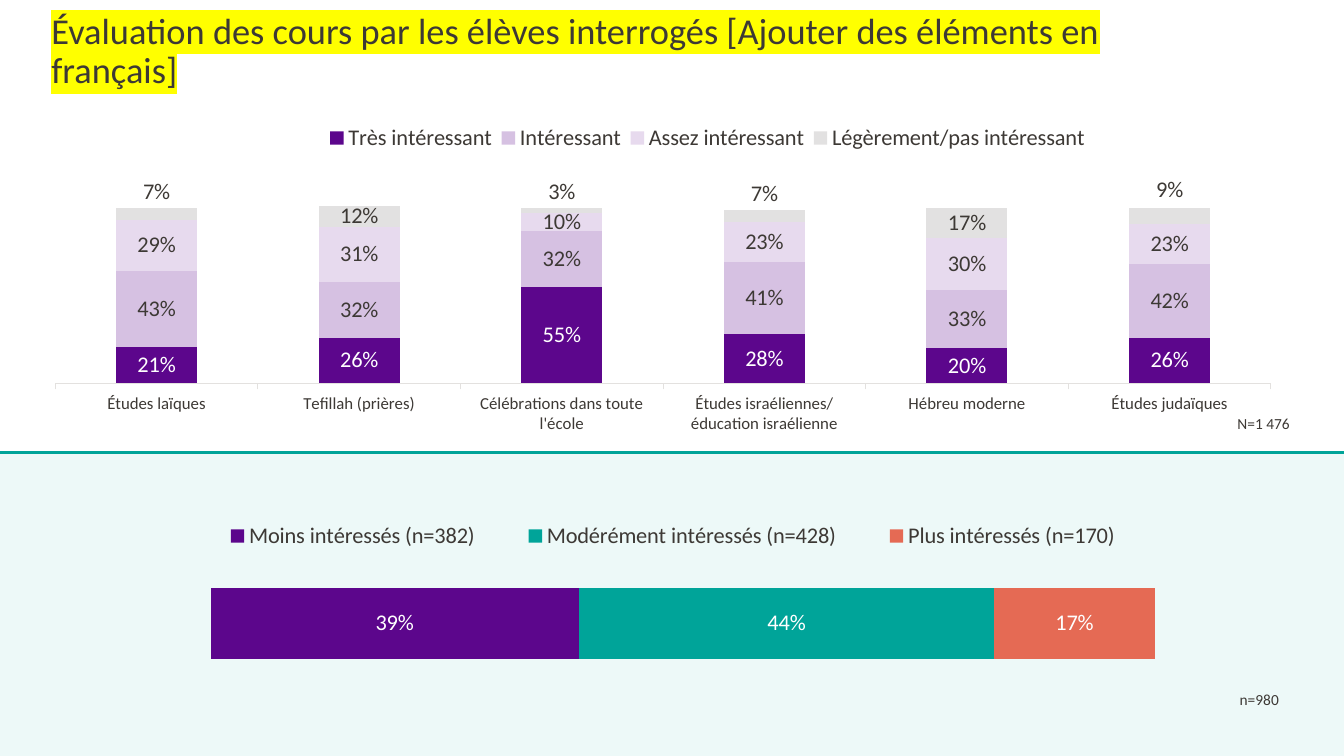
from dataclasses import dataclass

from lxml import etree
from pptx import Presentation
from pptx import util as u
from pptx.chart.data import CategoryChartData
from pptx.dml.color import RGBColor
from pptx.enum import chart as charts, shapes, text
from pptx.oxml.ns import qn


@dataclass(frozen=True)
class Theme:
    font: str = "Calibri"
    ink: str = "3D3935"
    white: str = "FFFFFF"
    purple: str = "5C068C"
    lilac: str = "D6C1E2"
    pale_lilac: str = "E7DAEE"
    grey: str = "E2E1E1"
    axis: str = "E3E1DF"
    teal: str = "00A499"
    coral: str = "E56A54"
    panel: str = "EDF9F8"
    highlight: str = "FFFF00"
    title_size: int = 26
    label_size: int = 16
    axis_size: int = 12
    note_size: int = 11


THEME = Theme()
PERCENT = r"0\%"
AXIS_MAXIMUM = 120

COURSES = ["Études laïques", "Tefillah (prières)", "Célébrations dans toute l'école",
           "Études israéliennes/éducation israélienne", "Hébreu moderne", "Études judaïques"]
# Each series: name, values, fill colour, label colour
COURSE_RATINGS = [
    ("Très intéressant", [21, 26, 55, 28, 20, 26], THEME.purple, THEME.white),
    ("Intéressant", [43, 32, 32, 41, 33, 42], THEME.lilac, THEME.ink),
    ("Assez intéressant", [29, 31, 10, 23, 30, 23], THEME.pale_lilac, THEME.ink),
    ("Légèrement/pas intéressant", [7, 12, 3, 7, 17, 9], THEME.grey, THEME.ink),
]
INTEREST_GROUPS = [
    ("Moins intéressés (n=382)", [39], THEME.purple, THEME.white),
    ("Modérément intéressés (n=428)", [44], THEME.teal, THEME.white),
    ("Plus intéressés (n=170)", [17], THEME.coral, THEME.white),
]
# Upward shift of the labels that sit above their column, by course index
RAISED_LABELS = {0: -0.06, 2: -0.05, 3: -0.06, 5: -0.07}


def rgb(value):
    return RGBColor.from_string(value)


def box(*lengths):
    return [u.Cm(length) for length in lengths]


def style_font(font, size, colour):
    font.name = THEME.font
    font.size = u.Pt(size)
    font.color.rgb = rgb(colour)


def set_layout(parent, after, inner=False, **fractions):
    """Place a chart part by fractions of the chart, after the named child."""
    for old in parent.findall(qn("c:layout")):
        parent.remove(old)
    layout = etree.Element(qn("c:layout"))
    manual = etree.SubElement(layout, qn("c:manualLayout"))
    if inner:
        etree.SubElement(manual, qn("c:layoutTarget"), val="inner")
    if "w" in fractions:
        for mode in ("xMode", "yMode"):
            etree.SubElement(manual, qn(f"c:{mode}"), val="edge")
    for name, value in fractions.items():
        etree.SubElement(manual, qn(f"c:{name}"), val=str(value))
    if after is None:
        parent.insert(0, layout)
    else:
        parent.find(qn(after)).addnext(layout)
    return layout


def add_title(slide, wording):
    title = slide.shapes.title
    title.left, title.top, title.width, title.height = box(1.04, 0.15, 29.21, 2.34)
    frame = title.text_frame
    frame.auto_size = text.MSO_AUTO_SIZE.NONE
    frame.word_wrap = True
    frame.vertical_anchor = text.MSO_ANCHOR.MIDDLE
    paragraph = frame.paragraphs[0]
    paragraph.alignment = text.PP_ALIGN.LEFT
    paragraph.line_spacing = 0.9
    style_font(paragraph.font, THEME.title_size, THEME.ink)
    run = paragraph.add_run()
    run.text = wording
    highlight = etree.SubElement(run._r.get_or_add_rPr(), qn("a:highlight"))
    etree.SubElement(highlight, qn("a:srgbClr"), val=THEME.highlight)


def add_panel(slide, top, width, height):
    """Add the tinted lower panel with a rule along its top edge."""
    panel = slide.shapes.add_shape(shapes.MSO_SHAPE.RECTANGLE, *box(0, top, width, height))
    panel.shadow.inherit = False
    panel.fill.solid()
    panel.fill.fore_color.rgb = rgb(THEME.panel)
    panel.line.fill.background()
    rule = slide.shapes.add_connector(shapes.MSO_CONNECTOR.STRAIGHT, *box(0, top, width, top))
    rule.line.color.rgb = rgb(THEME.teal)
    rule.line.width = u.Pt(2.25)
    etree.SubElement(rule._element.spPr, qn("a:effectLst"))


def add_note(slide, wording, left, top):
    note = slide.shapes.add_textbox(*box(left, top, 2.57, 0.74))
    frame = note.text_frame
    frame.word_wrap = True
    frame.auto_size = text.MSO_AUTO_SIZE.SHAPE_TO_FIT_TEXT
    paragraph = frame.paragraphs[0]
    paragraph.text = wording
    paragraph.alignment = text.PP_ALIGN.CENTER
    style_font(paragraph.font, THEME.note_size, THEME.ink)


def add_stacked_chart(slide, kind, place, categories, rows, legend_position, plot_area, legend_area):
    data = CategoryChartData(number_format=PERCENT)
    data.categories = categories
    for name, values, _, _ in rows:
        data.add_series(name, values)
    chart = slide.shapes.add_chart(kind, *box(*place), data).chart
    chart.has_title = False
    style_font(chart.font, THEME.axis_size, THEME.ink)

    chart.has_legend = True
    chart.legend.position = legend_position
    chart.legend.include_in_layout = False
    style_font(chart.legend.font, THEME.label_size, THEME.ink)
    set_layout(chart.legend._element, "c:legendPos", **legend_area)
    set_layout(chart._chartSpace.chart.plotArea, None, inner=True, **plot_area)

    values = chart.value_axis
    values.minimum_scale, values.maximum_scale = 0, AXIS_MAXIMUM
    values.has_major_gridlines = False
    values.visible = False

    plot = chart.plots[0]
    plot.gap_width, plot.overlap = 150, 100
    plot.vary_by_categories = False
    for series, (_, _, fill, label_colour) in zip(plot.series, rows):
        series.format.fill.solid()
        series.format.fill.fore_color.rgb = rgb(fill)
        labels = series.data_labels
        labels.show_value = True
        labels.number_format = PERCENT
        labels.number_format_is_linked = False
        labels.position = charts.XL_LABEL_POSITION.CENTER
        style_font(labels.font, THEME.label_size, label_colour)
    return chart


def style_category_axis(axis):
    axis.major_tick_mark = charts.XL_TICK_MARK.OUTSIDE
    axis.format.line.color.rgb = rgb(THEME.axis)
    axis.format.line.width = u.Pt(0.75)
    style_font(axis.tick_labels.font, THEME.axis_size, THEME.ink)


def raise_labels(series, shifts):
    for index, shift in shifts.items():
        label = series.points[index].data_label
        style_font(label.font, THEME.label_size, THEME.ink)
        label.position = charts.XL_LABEL_POSITION.CENTER
        element = series.data_labels._element.xpath(f"c:dLbl[c:idx/@val='{index}']")[0]
        layout = set_layout(element, "c:idx", x=0, y=shift)
        number_format = etree.Element(qn("c:numFmt"), formatCode=PERCENT, sourceLinked="0")
        layout.addnext(number_format)


def main():
    presentation = Presentation()
    presentation.slide_width, presentation.slide_height = box(33.87, 19.05)
    slide = presentation.slides.add_slide(presentation.slide_layouts[5])

    add_panel(slide, 11.4, 33.87, 7.65)
    add_title(slide, "Évaluation des cours par les élèves interrogés [Ajouter des éléments en français]")

    ratings = add_stacked_chart(
        slide, charts.XL_CHART_TYPE.COLUMN_STACKED, (1.04, 2.51, 31.98, 9.22),
        COURSES, COURSE_RATINGS, charts.XL_LEGEND_POSITION.BOTTOM,
        plot_area=dict(x=0.011, y=0.2, w=0.958, h=0.576),
        legend_area=dict(x=0.22, y=0.06, w=0.61, h=0.09))
    style_category_axis(ratings.category_axis)
    raise_labels(ratings.plots[0].series[-1], RAISED_LABELS)

    groups = add_stacked_chart(
        slide, charts.XL_CHART_TYPE.BAR_STACKED, (1.04, 11.25, 32.82, 7.65),
        ["1"], INTEREST_GROUPS, charts.XL_LEGEND_POSITION.TOP,
        plot_area=dict(x=0.13, y=0.292, w=0.87, h=0.583),
        legend_area=dict(x=0.11, y=0.24, w=0.75, h=0.11))
    groups.category_axis.visible = False

    add_note(slide, "n=980", 30.45, 17.27)
    add_note(slide, "N=1 476", 30.56, 10.31)
    presentation.save("out.pptx")


if __name__ == "__main__":
    main()
